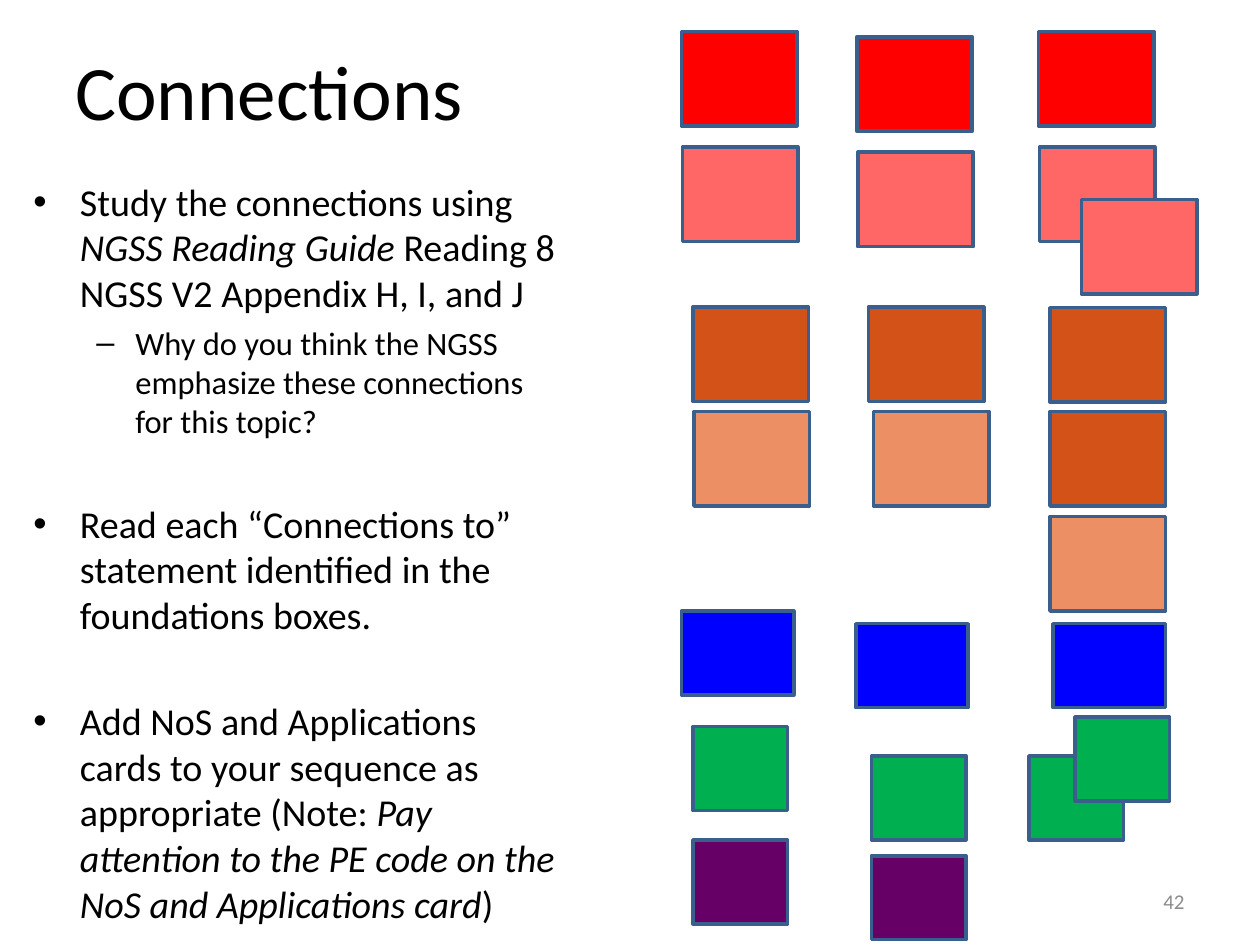
from dataclasses import dataclass

from lxml import etree
from pptx import Presentation
from pptx import util as u
from pptx.dml.color import RGBColor
from pptx.enum import shapes, text
from pptx.oxml import ns


@dataclass(frozen=True)
class Theme:
    font: str = "Calibri"
    ink: str = "000000"
    muted: str = "8C8C8C"
    outline: str = "3A5F8C"
    outline_width: float = 2
    purple: str = "660066"
    green: str = "00B050"
    blue: str = "0000FF"
    orange: str = "D25218"
    peach: str = "ED8F65"
    red: str = "FF0000"
    pink: str = "FF6666"
    title_size: float = 44
    bullet_size: float = 21.7
    dash_size: float = 18.6
    number_size: float = 12


@dataclass(frozen=True)
class Cards:
    """Equal cards of one colour; corners are (column, row) on the grid."""
    fill: str
    size: tuple[float, float]
    corners: tuple[tuple[float, float], ...]


@dataclass(frozen=True)
class Item:
    """A list paragraph; every second run is italic."""
    runs: tuple[str, ...]
    level: int = 0
    gap: float = 4.3


THEME = Theme()
COLUMNS, ROWS = 120, 90  # the grid that covers the slide
LARGE, WIDE, SMALL = (11, 9), (10.7, 8), (9, 8)
SECTION_GAP = 34.6
INDENTS = ((0.37, -0.37, "•"), (0.81, -0.31, "–"))  # inches, by level

CARD_SETS = (
    Cards(THEME.purple, SMALL, ((66, 80), (83, 81.5))),
    Cards(THEME.green, SMALL, ((66, 69.2), (83, 72), (98, 72), (102.4, 68.3))),
    Cards(THEME.blue, WIDE, ((64.9, 58.2), (81.5, 59.4), (100.3, 59.4))),
    Cards(THEME.orange, LARGE, ((100, 39.2), (100, 29.3), (66, 29.25), (82.7, 29.25))),
    Cards(THEME.peach, LARGE, ((66.1, 39.2), (83.2, 39.2), (100, 49.2))),
    Cards(THEME.red, LARGE, ((64.9, 3), (81.6, 3.5), (98.9, 3))),
    Cards(THEME.pink, LARGE, ((65, 14), (81.7, 14.5), (99, 14), (103, 19))),
)

ITEMS = (
    Item(("Study the connections using ", "NGSS Reading Guide ",
          "Reading 8 NGSS V2 Appendix H, I, and J")),
    Item(("Why do you think the NGSS emphasize these connections for this topic?",), level=1),
    Item(("Read each “Connections to” statement identified in the foundations boxes.",),
         gap=SECTION_GAP),
    Item(("Add NoS and Applications cards to your sequence as appropriate (Note: ",
          "Pay attention to the PE code on the NoS and Applications card", ")"),
         gap=SECTION_GAP),
)

prs = Presentation()
prs.slide_width, prs.slide_height = u.Inches(10), u.Inches(7.5)
slide = prs.slides.add_slide(prs.slide_layouts[6])


def grid_box(column: float, row: float, width: float, height: float) -> tuple[int, ...]:
    across, down = prs.slide_width / COLUMNS, prs.slide_height / ROWS
    return tuple(round(v) for v in (column * across, row * down, width * across, height * down))


def style(font, size: float, color: str = THEME.ink) -> None:
    font.name, font.size = THEME.font, u.Pt(size)
    font.color.rgb = RGBColor.from_string(color)


def add_frame(box: tuple[float, ...], anchor=text.MSO_ANCHOR.MIDDLE):
    frame = slide.shapes.add_textbox(*grid_box(*box)).text_frame
    frame.word_wrap = True
    frame.vertical_anchor = anchor
    return frame


def add_line(box: tuple[float, ...], words: str, size: float, color: str, align) -> None:
    frame = add_frame(box)
    frame.text = words
    frame.paragraphs[0].alignment = align
    style(frame.paragraphs[0].runs[0].font, size, color)


def add_list(box: tuple[float, ...], items: tuple[Item, ...]) -> None:
    frame = add_frame(box, text.MSO_ANCHOR.TOP)
    for index, item in enumerate(items):
        paragraph = frame.add_paragraph() if index else frame.paragraphs[0]
        paragraph.level = item.level
        paragraph.space_before = u.Pt(item.gap)
        margin, indent, mark = INDENTS[item.level]
        properties = paragraph._p.get_or_add_pPr()
        properties.set("marL", str(u.Inches(margin)))
        properties.set("indent", str(u.Inches(indent)))
        etree.SubElement(properties, ns.qn("a:buFont")).set("typeface", "Arial")
        etree.SubElement(properties, ns.qn("a:buChar")).set("char", mark)
        for position, words in enumerate(item.runs):
            run = paragraph.add_run()
            run.text = words
            style(run.font, THEME.dash_size if item.level else THEME.bullet_size)
            run.font.italic = position % 2 == 1


def add_cards(cards: Cards) -> None:
    for corner in cards.corners:
        card = slide.shapes.add_shape(shapes.MSO_SHAPE.RECTANGLE,
                                      *grid_box(*corner, *cards.size))
        card.shadow.inherit = False
        card.fill.solid()
        card.fill.fore_color.rgb = RGBColor.from_string(cards.fill)
        card.line.color.rgb = RGBColor.from_string(THEME.outline)
        card.line.width = u.Pt(THEME.outline_width)


# Title and reading tasks
add_line((6, 1, 108, 15), "Connections", THEME.title_size, THEME.ink, text.PP_ALIGN.LEFT)
add_list((2, 16.4, 53, 64), ITEMS)

# Coloured cards, back to front
for card_set in CARD_SETS:
    add_cards(card_set)

# Slide number
add_line((86, 83.4, 28, 4.8), "42", THEME.number_size, THEME.muted, text.PP_ALIGN.RIGHT)

prs.save("out.pptx")
